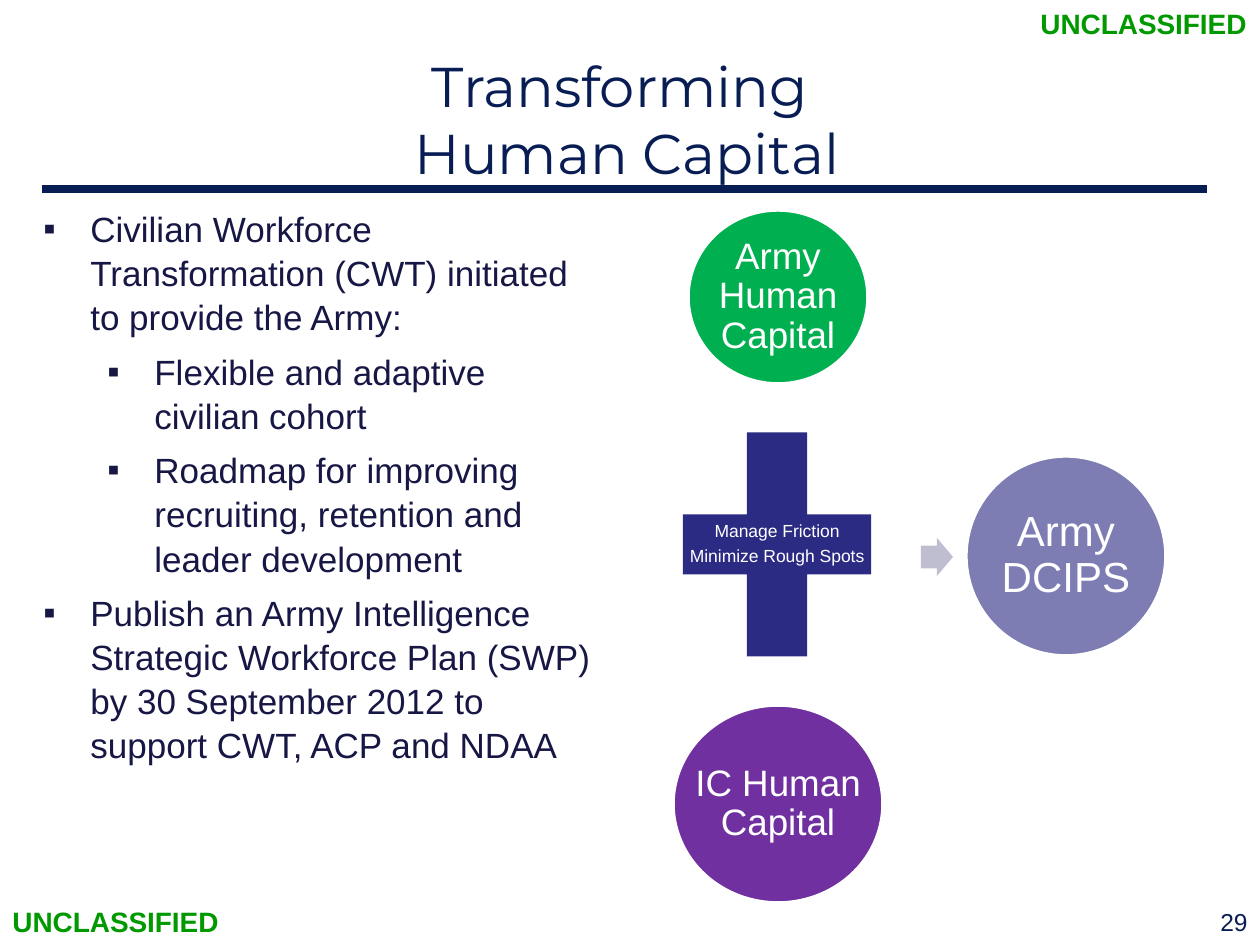
import dataclasses

import pptx
import pptx.dml.color
import pptx.enum.shapes
import pptx.enum.text
import pptx.oxml
import pptx.oxml.ns
import pptx.util

EMU_PER_PX = 914400 / 126
SHAPE = pptx.enum.shapes.MSO_SHAPE
ALIGN = pptx.enum.text.PP_ALIGN
ANCHOR = pptx.enum.text.MSO_ANCHOR


@dataclasses.dataclass(frozen=True)
class Theme:
    navy: str = "081D54"
    ink: str = "171745"
    marking: str = "009900"
    white: str = "FFFFFF"
    green: str = "00B050"
    indigo: str = "2B2B84"
    purple: str = "7030A0"
    arrow: str = "BEBED0"
    lavender: str = "7D7DB3"
    heading_font: str = "Montserrat"
    body_font: str = "Arial"
    title_size: int = 32
    body_size: int = 20
    marking_size: int = 16
    number_size: int = 14
    disc_size: int = 21
    result_size: int = 24
    plus_size: int = 10


THEME = Theme()

BULLETS = [
    (0, "Civilian Workforce Transformation (CWT) initiated to provide the Army:"),
    (1, "Flexible and adaptive civilian cohort"),
    (1, "Roadmap for improving recruiting, retention and leader development"),
    (0, "Publish an Army Intelligence Strategic Workforce Plan (SWP) "
        "by 30 September 2012 to support CWT, ACP and NDAA"),
]

DISCS = [
    ("Army Human Capital", (688, 210, 180, 174), THEME.green, THEME.disc_size),
    ("IC Human Capital", (673, 705, 210, 198), THEME.purple, THEME.disc_size),
    ("Army DCIPS", (966, 456, 200, 200), THEME.lavender, THEME.result_size),
]


def px(length):
    return pptx.util.Emu(round(length * EMU_PER_PX))


def rgb(color):
    return pptx.dml.color.RGBColor.from_string(color)


def style(para, size, color, font=THEME.body_font, bold=False):
    para.font.size = pptx.util.Pt(size)
    para.font.name = font
    para.font.bold = bold
    para.font.color.rgb = rgb(color)


def add_text(page, area, lines, size, color, font=THEME.body_font, bold=False,
             align=ALIGN.LEFT, anchor=ANCHOR.TOP, wrap=True):
    """Add a text box with one paragraph per line and return its text frame."""
    frame = page.shapes.add_textbox(*map(px, area)).text_frame
    frame.word_wrap = wrap
    frame.vertical_anchor = anchor
    for index, line in enumerate(lines):
        para = frame.add_paragraph() if index else frame.paragraphs[0]
        para.text = line
        para.alignment = align
        style(para, size, color, font, bold)
    return frame


def add_shape(page, preset, area, fill, outline=None):
    shape = page.shapes.add_shape(preset, *map(px, area))
    shape.shadow.inherit = False
    shape.fill.solid()
    shape.fill.fore_color.rgb = rgb(fill)
    if outline:
        shape.line.color.rgb = rgb(outline)
        shape.line.width = pptx.util.Pt(2)
    else:
        shape.line.fill.background()
    return shape


def add_label(page, area, lines, size, inset):
    """Add tight centred text over a shape, using the shape's full extent."""
    frame = add_text(page, area, lines, size, THEME.white,
                     align=ALIGN.CENTER, anchor=ANCHOR.MIDDLE)
    frame.margin_left = frame.margin_right = px(inset)
    frame.margin_top = frame.margin_bottom = px(inset)
    for para in frame.paragraphs:
        para.line_spacing = 0.9
        para.space_after = pptx.util.Pt(0.35 * size)


def add_rule(page, left, right, y):
    rule = page.shapes.add_connector(
        pptx.enum.shapes.MSO_CONNECTOR.STRAIGHT, px(left), px(y), px(right), px(y))
    rule.line.color.rgb = rgb(THEME.navy)
    rule.line.width = pptx.util.Pt(4.5)
    properties = rule._element.spPr
    properties.append(properties.makeelement(pptx.oxml.ns.qn("a:effectLst"), {}))


def set_bullet(para, level):
    para.level = level
    properties = para._p.get_or_add_pPr()
    properties.set("marL", str(px(47 + 64 * level)))
    properties.set("indent", str(px(-47)))
    for tag, name, value in (("a:buFont", "typeface", THEME.body_font),
                             ("a:buChar", "char", "▪")):
        properties.append(
            properties.makeelement(pptx.oxml.ns.qn(tag), {name: value}))


def add_bullets(page, area, items):
    frame = page.shapes.add_textbox(*map(px, area)).text_frame
    frame.word_wrap = True
    for index, (level, text) in enumerate(items):
        para = frame.add_paragraph() if index else frame.paragraphs[0]
        para.text = text
        set_bullet(para, level)
        para.line_spacing = 1.05
        para.space_before = pptx.util.Pt(3 if index else 0)
        para.space_after = pptx.util.Pt(3)
        style(para, THEME.body_size, THEME.ink)


def add_equation(page):
    """Draw the two capital pools added together, leading to the result."""
    for text, area, fill, size in DISCS:
        add_shape(page, SHAPE.OVAL, area, fill, THEME.white)
        add_label(page, area, [text], size, inset=4)
    plus_area = (649, 392, 256, 305)
    add_shape(page, SHAPE.MATH_PLUS, plus_area, THEME.indigo)
    add_label(page, plus_area, ["Manage Friction", "Minimize Rough Spots"],
              THEME.plus_size, inset=0)
    arrow = add_shape(page, SHAPE.RIGHT_ARROW, (921, 538, 32, 38), THEME.arrow)
    arrow.adjustments[0] = 0.6
    arrow.adjustments[1] = 0.5


def main():
    deck = pptx.Presentation()
    deck.slide_width, deck.slide_height = px(1260), px(945)
    page = deck.slides.add_slide(deck.slide_layouts[6])

    add_rule(page, 42, 1207, 189)
    add_text(page, (232, 42, 776, 154), ["Transforming\v Human Capital"],
             THEME.title_size, THEME.navy, THEME.heading_font,
             align=ALIGN.CENTER, anchor=ANCHOR.MIDDLE)
    add_bullets(page, (31, 199, 577, 553), BULLETS)
    add_text(page, (966, 901, 294, 44), ["29"], THEME.number_size, THEME.navy,
             align=ALIGN.RIGHT)
    for left, top in ((0, 898), (1028, 0)):
        add_text(page, (left, top, 232, 47), ["UNCLASSIFIED"],
                 THEME.marking_size, THEME.marking, bold=True, wrap=False)
    add_equation(page)
    deck.save("out.pptx")


if __name__ == "__main__":
    main()
